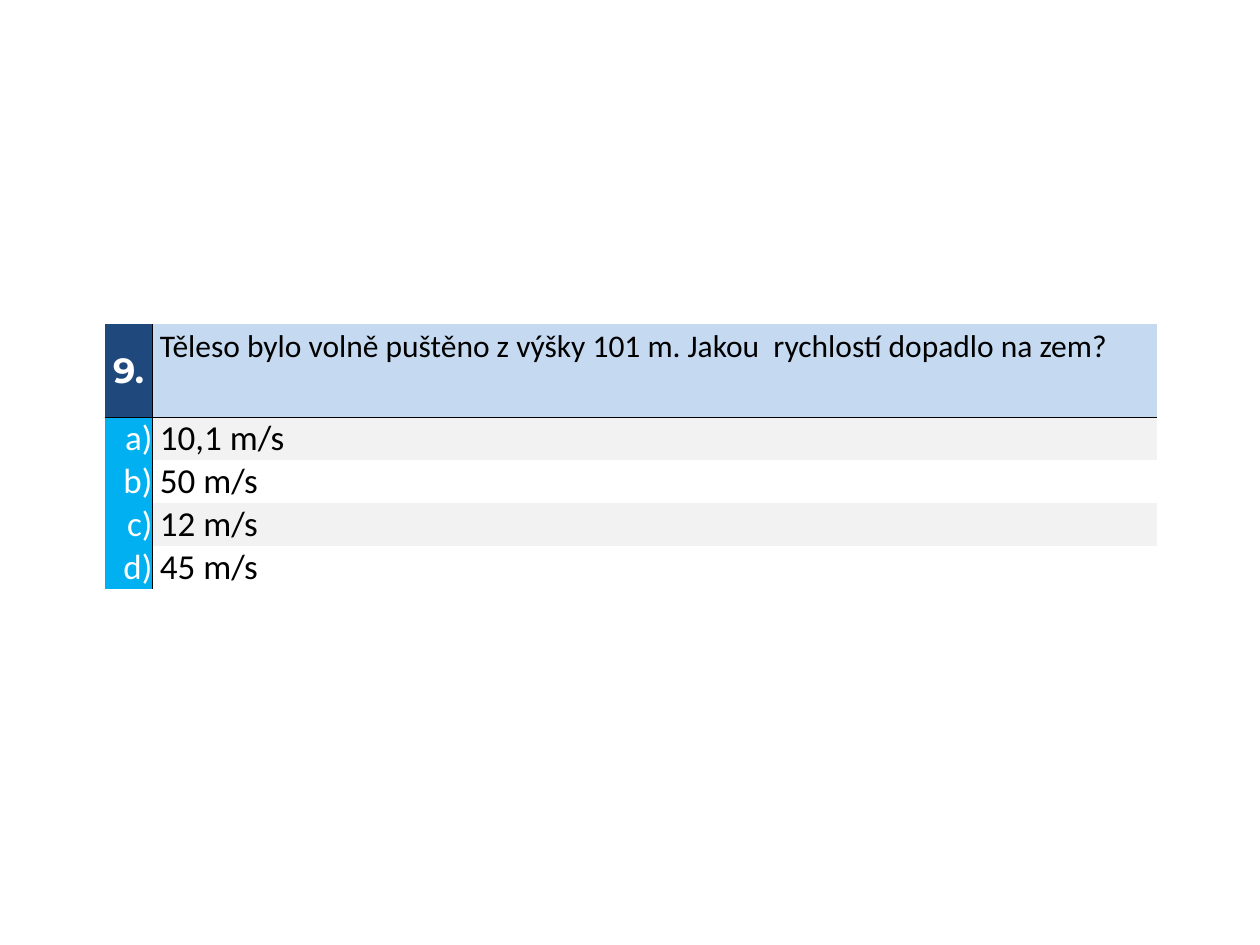
from dataclasses import dataclass
from typing import Optional

from pptx import Presentation
from pptx.dml.color import RGBColor
from pptx.enum.text import MSO_ANCHOR, PP_ALIGN
from pptx.oxml.ns import qn
from pptx.util import Inches, Pt
from lxml.etree import SubElement


@dataclass(frozen=True)
class Theme:
    navy: str = "1F497D"
    pale_blue: str = "C5D9F1"
    cyan: str = "00B0F0"
    grey: str = "F2F2F2"
    white: str = "FFFFFF"
    black: str = "000000"
    body_font: str = "Calibri"
    number_font: str = "Montserrat"
    question_size: int = 18
    answer_size: int = 20
    rule_width: float = 0.5


THEME = Theme()


@dataclass(frozen=True)
class CellStyle:
    fill: Optional[str]
    color: str
    anchor: MSO_ANCHOR
    align: PP_ALIGN
    borders: str
    size: int = THEME.answer_size
    font: str = THEME.body_font
    bold: bool = False
    left: float = 0
    top: float = 0


def set_borders(cell, sides: str) -> None:
    """Rule the given sides (letters out of LRTB) and clear the others."""
    properties = cell._tc.get_or_add_tcPr()
    for side in "LRTB":
        line = SubElement(properties, qn(f"a:ln{side}"), w=str(Pt(THEME.rule_width)))
        if side in sides:
            solid = SubElement(line, qn("a:solidFill"))
            SubElement(solid, qn("a:srgbClr"), val=THEME.black)
        else:
            SubElement(line, qn("a:noFill"))


def write_cell(cell, text: str, style: CellStyle) -> None:
    set_borders(cell, style.borders)
    if style.fill:
        cell.fill.solid()
        cell.fill.fore_color.rgb = RGBColor.from_string(style.fill)
    else:
        cell.fill.background()
    cell.margin_left, cell.margin_top = Inches(style.left), Inches(style.top)
    cell.margin_right = cell.margin_bottom = 0
    cell.vertical_anchor = style.anchor
    cell.text_frame.text = text
    paragraph = cell.text_frame.paragraphs[0]
    paragraph.alignment = style.align
    font = paragraph.runs[0].font
    font.name, font.size, font.bold = style.font, Pt(style.size), style.bold
    font.color.rgb = RGBColor.from_string(style.color)


def main() -> None:
    question = "Těleso bylo volně puštěno z výšky 101 m. Jakou  rychlostí dopadlo na zem?"
    answers = ["10,1 m/s", "50 m/s", "12 m/s", "45 m/s"]
    text_indent = 0.06

    presentation = Presentation()
    presentation.slide_width, presentation.slide_height = Inches(10), Inches(7.5)
    slide = presentation.slides.add_slide(presentation.slide_layouts[6])

    quiz = slide.shapes.add_table(
        len(answers) + 1, 2, Inches(0.83), Inches(2.57), Inches(8.35), Inches(2.07)
    ).table
    quiz.first_row = quiz.horz_banding = False
    for column, width in zip(quiz.columns, (0.38, 7.97)):
        column.width = Inches(width)
    for row, height in zip(quiz.rows, [0.74] + [0.31] * len(answers)):
        row.height = Inches(height)

    write_cell(quiz.cell(0, 0), "9.", CellStyle(
        THEME.navy, THEME.white, MSO_ANCHOR.MIDDLE, PP_ALIGN.CENTER, "RB",
        font=THEME.number_font, bold=True))
    write_cell(quiz.cell(0, 1), question, CellStyle(
        THEME.pale_blue, THEME.black, MSO_ANCHOR.TOP, PP_ALIGN.LEFT, "LB",
        size=THEME.question_size, left=text_indent, top=0.03))

    for number, (letter, answer) in enumerate(zip("abcd", answers), start=1):
        top_rule = "T" if number == 1 else ""
        band = THEME.grey if number % 2 else None
        write_cell(quiz.cell(number, 0), f"{letter})", CellStyle(
            THEME.cyan, THEME.white, MSO_ANCHOR.MIDDLE, PP_ALIGN.RIGHT, "R" + top_rule))
        write_cell(quiz.cell(number, 1), answer, CellStyle(
            band, THEME.black, MSO_ANCHOR.BOTTOM, PP_ALIGN.LEFT, "L" + top_rule,
            left=text_indent))

    presentation.save("out.pptx")


if __name__ == "__main__":
    main()
